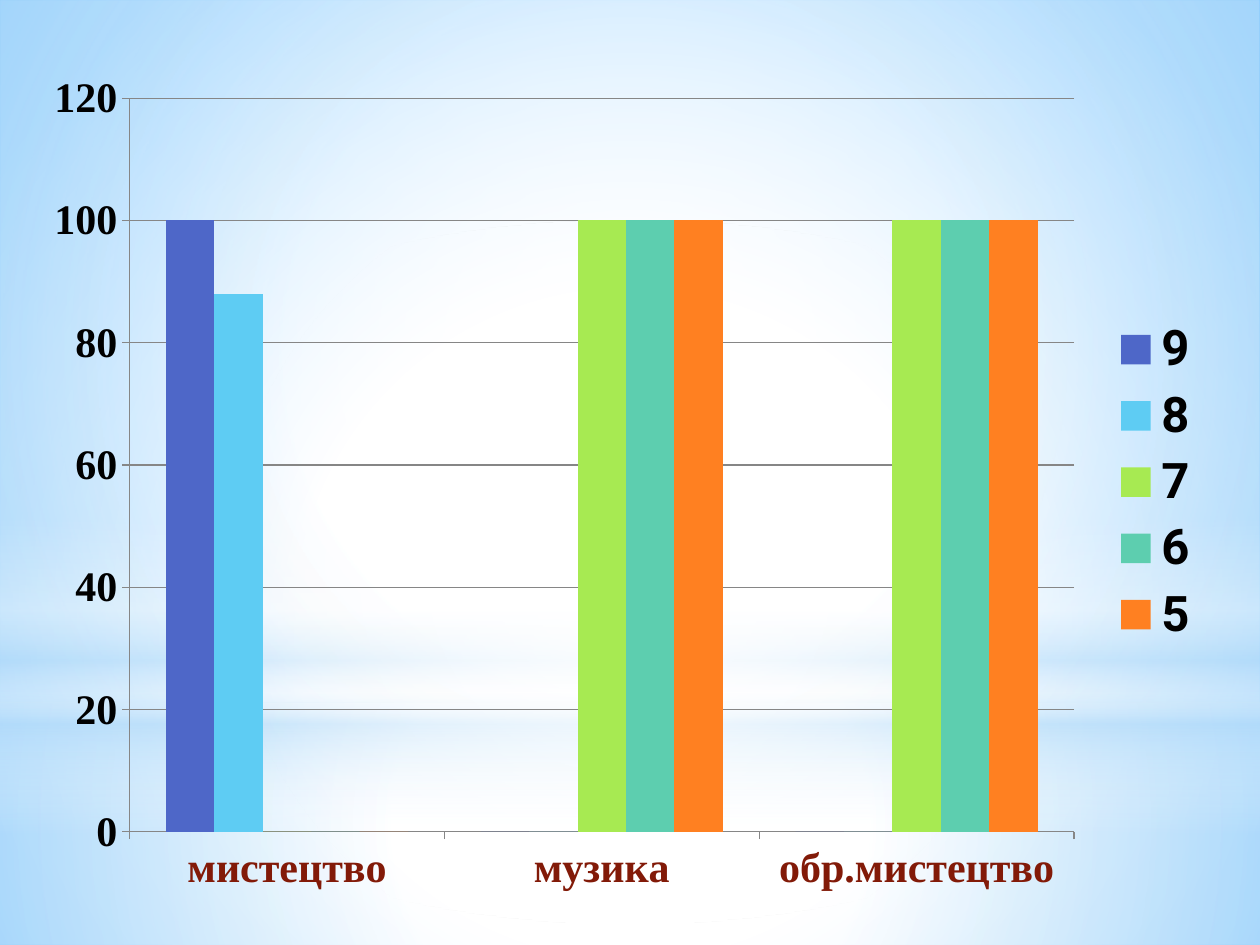
from dataclasses import dataclass
from typing import NamedTuple

from lxml import etree
from pptx import Presentation
from pptx.chart.data import CategoryChartData
from pptx.dml.color import RGBColor
from pptx.enum.chart import XL_CHART_TYPE, XL_LEGEND_POSITION, XL_TICK_MARK
from pptx.enum.shapes import MSO_SHAPE
from pptx.oxml import parse_xml
from pptx.oxml.ns import nsdecls, qn
from pptx.util import Cm, Pt

COLUMNS = XL_CHART_TYPE.COLUMN_CLUSTERED
LEGEND_RIGHT = XL_LEGEND_POSITION.RIGHT
TICK_OUT = XL_TICK_MARK.OUTSIDE
RECTANGLE = MSO_SHAPE.RECTANGLE
ELLIPSE = MSO_SHAPE.OVAL


class Box(NamedTuple):
    left: int
    top: int
    width: int
    height: int


@dataclass(frozen=True)
class Theme:
    white: str = "FFFFFF"
    sky: str = "63BCFF"
    mist: str = "B4DCFA"
    ink: str = "000000"
    category: str = "821A08"
    grid: str = "868686"
    series: tuple = ("4E67C8", "5ECCF3", "A7EA52", "5DCEAF", "FF8021")
    body_font: str = "Roboto"
    axis_font: str = "Times New Roman"
    body_size: int = 18
    axis_size: int = 24
    legend_size: int = 28


THEME = Theme()
CENTRE = (50, 50, 50, 50)
SUBJECTS = ("мистецтво", "музика", "обр.мистецтво")
GRADES = {
    "9": (100, 0, 0),
    "8": (88, 0, 0),
    "7": (0, 100, 100),
    "6": (0, 100, 100),
    "5": (0, 100, 100),
}


def set_gradient(element, stops, focus=None):
    stop_xml = "".join(
        f'<a:gs pos="{position * 1000}"><a:srgbClr val="{color}">'
        f'<a:alpha val="{opacity * 1000}"/></a:srgbClr></a:gs>'
        for position, color, opacity in stops
    )
    if focus:
        sides = " ".join(f'{side}="{value * 1000}"' for side, value in zip("ltrb", focus))
        direction = f'<a:path path="circle"><a:fillToRect {sides}/></a:path>'
    else:
        direction = '<a:lin ang="5400000" scaled="0"/>'
    gradient = parse_xml(
        f'<a:gradFill {nsdecls("a")} rotWithShape="1">'
        f"<a:gsLst>{stop_xml}</a:gsLst>{direction}</a:gradFill>"
    )
    solid = element.find(".//" + qn("a:solidFill"))
    solid.getparent().replace(solid, gradient)


def add_glow(page, kind, box, stops, focus=None):
    glow = page.shapes.add_shape(kind, *box)
    glow.shadow.inherit = False
    glow.line.fill.background()
    glow.fill.solid()
    glow.fill.fore_color.rgb = RGBColor.from_string(THEME.white)
    set_gradient(glow.element, stops, focus)


def add_backdrop(page, box):
    white, mist = THEME.white, THEME.mist
    fill = page.background.fill
    fill.solid()
    fill.fore_color.rgb = RGBColor.from_string(white)
    sky_stops = ((0, white, 100), (42, white, 100), (100, THEME.sky, 100))
    set_gradient(page.element, sky_stops, (24, 44, 24, 12))

    horizon = Cm(14.17)
    ground = Box(box.left, box.top + horizon, box.width, box.height - horizon)
    sky = Box(box.left, box.top, box.width, horizon)
    band = Box(box.left, box.top + Cm(10.46), box.width, Cm(6.35))
    halo = Box(box.left, box.top + Cm(4.45), box.width, horizon)
    add_glow(page, RECTANGLE, ground, ((0, white, 91), (37, white, 76), (100, mist, 79)), CENTRE)
    add_glow(page, RECTANGLE, sky, ((0, white, 89), (48, white, 62), (100, mist, 79)), CENTRE)
    add_glow(page, RECTANGLE, band, (
        (0, white, 0), (29, white, 30), (45, mist, 40),
        (55, white, 26), (65, mist, 60), (100, white, 0),
    ))
    add_glow(page, ELLIPSE, halo, ((0, white, 100), (56, white, 0)), CENTRE)


def format_font(font, name, size, color):
    font.name = name
    font.size = Pt(size)
    font.bold = True
    font.color.rgb = RGBColor.from_string(color)


def format_line(line):
    line.color.rgb = RGBColor.from_string(THEME.grid)
    line.width = Pt(0.75)


def format_axis(axis, color):
    axis.major_tick_mark = TICK_OUT
    format_line(axis.format.line)
    format_font(axis.tick_labels.font, THEME.axis_font, THEME.axis_size, color)


def place_plot(chart, **fractions):
    plot_area = chart.element.find(".//" + qn("c:plotArea"))
    for old_layout in plot_area.findall(qn("c:layout")):
        plot_area.remove(old_layout)
    layout = etree.Element(qn("c:layout"))
    manual = etree.SubElement(layout, qn("c:manualLayout"))
    settings = {"layoutTarget": "inner", "xMode": "edge", "yMode": "edge", **fractions}
    for tag, value in settings.items():
        etree.SubElement(manual, qn(f"c:{tag}")).set("val", str(value))
    plot_area.insert(0, layout)


def add_grade_chart(page, box):
    data = CategoryChartData()
    data.categories = SUBJECTS
    for grade, values in GRADES.items():
        data.add_series(grade, values)
    chart = page.shapes.add_chart(COLUMNS, *box, data).chart
    chart.has_title = False
    format_font(chart.font, THEME.body_font, THEME.body_size, THEME.ink)

    plot = chart.plots[0]
    plot.gap_width = 150
    plot.overlap = 0
    plot.vary_by_categories = False
    for series, color in zip(plot.series, THEME.series):
        series.format.fill.solid()
        series.format.fill.fore_color.rgb = RGBColor.from_string(color)

    format_axis(chart.category_axis, THEME.category)
    value_axis = chart.value_axis
    format_axis(value_axis, THEME.ink)
    value_axis.minimum_scale, value_axis.maximum_scale = 0, 120
    value_axis.major_unit = 20
    value_axis.has_major_gridlines = True
    format_line(value_axis.major_gridlines.format.line)

    chart.has_legend = True
    chart.legend.position = LEGEND_RIGHT
    chart.legend.include_in_layout = False
    format_font(chart.legend.font, THEME.body_font, THEME.legend_size, THEME.ink)
    place_plot(chart, x=0.08, y=0.05, w=0.8, h=0.86)


def main():
    deck = Presentation()
    deck.slide_width, deck.slide_height = Cm(25.4), Cm(19.05)
    page = deck.slides.add_slide(deck.slide_layouts.get_by_name("Blank"))
    add_backdrop(page, Box(0, 0, deck.slide_width, deck.slide_height))
    add_grade_chart(page, Box(Cm(0.71), Cm(1.12), Cm(23.8), Cm(17.2)))
    deck.save("out.pptx")


if __name__ == "__main__":
    main()
